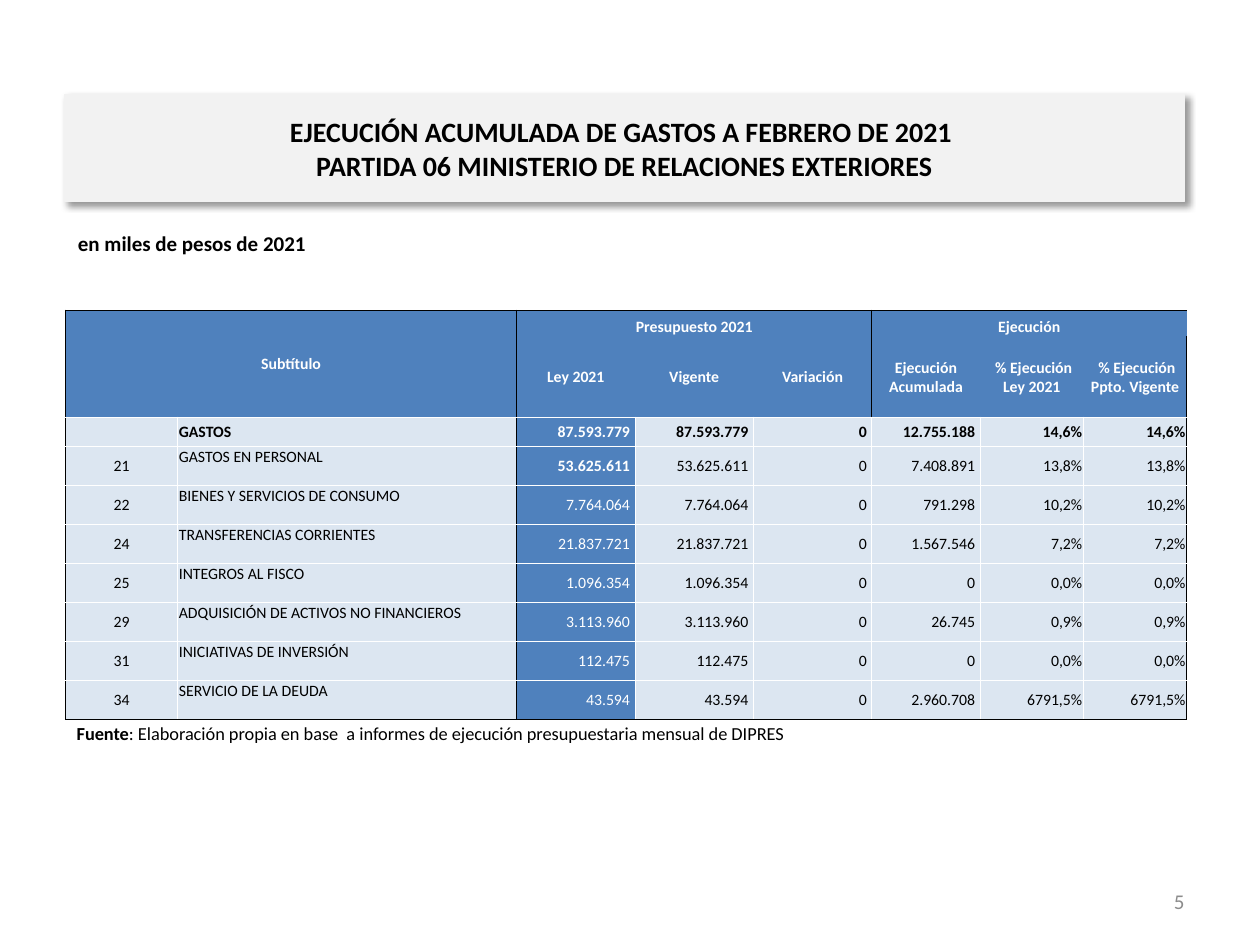
import dataclasses

import lxml.etree
import pptx
import pptx.dml.color
import pptx.enum.text
import pptx.oxml.ns
import pptx.util

Inches = pptx.util.Inches
Pt = pptx.util.Pt
ALIGN = pptx.enum.text.PP_ALIGN
ANCHOR = pptx.enum.text.MSO_ANCHOR
qn = pptx.oxml.ns.qn


@dataclasses.dataclass(frozen=True)
class Theme:
    """Colours and type of the slide."""
    font: str = "Calibri"
    black: str = "000000"
    white: str = "FFFFFF"
    banner: str = "F2F2F2"
    header: str = "4F81BD"
    body: str = "DCE6F1"
    muted: str = "8C8C8C"
    title_size: float = 16
    unit_size: float = 12
    source_size: float = 10.5
    table_size: float = 9
    rule: float = 0.5


THEME = Theme()

COLUMN_WIDTHS = [0.89, 2.69, 0.94, 0.94, 0.94, 0.86, 0.82, 0.82]
HEADER_ROWS = [
    ["Subtítulo", "", "Presupuesto 2021", "", "", "Ejecución", "", ""],
    ["", "", "Ley 2021", "Vigente", "Variación", "Ejecución Acumulada",
     " % Ejecución Ley 2021", " % Ejecución Ppto. Vigente"],
]
BUDGET = [
    ("", "GASTOS", "87.593.779", "12.755.188", "14,6%"),
    ("21", "GASTOS EN PERSONAL", "53.625.611", "7.408.891", "13,8%"),
    ("22", "BIENES Y SERVICIOS DE CONSUMO", "7.764.064", "791.298", "10,2%"),
    ("24", "TRANSFERENCIAS CORRIENTES", "21.837.721", "1.567.546", "7,2%"),
    ("25", "INTEGROS AL FISCO", "1.096.354", "0", "0,0%"),
    ("29", "ADQUISICIÓN DE ACTIVOS NO FINANCIEROS", "3.113.960", "26.745", "0,9%"),
    ("31", "INICIATIVAS DE INVERSIÓN", "112.475", "0", "0,0%"),
    ("34", "SERVICIO DE LA DEUDA", "43.594", "2.960.708", "6791,5%"),
]
ROW_HEIGHTS = [0.21, 0.64, 0.23] + [0.31] * (len(BUDGET) - 1)


def rgb(value):
    """Return a colour object for a hex value."""
    return pptx.dml.color.RGBColor.from_string(value)


def write(paragraph, text, size, color=THEME.black, bold=False, align=ALIGN.LEFT):
    """Append formatted text to a paragraph, breaking lines at newlines."""
    paragraph.alignment = align
    for index, line in enumerate(text.split("\n")):
        if index:
            paragraph.add_line_break()
        run = paragraph.add_run()
        run.text = line
        run.font.name = THEME.font
        run.font.size = Pt(size)
        run.font.bold = bold
        run.font.color.rgb = rgb(color)


def add_box(slide, box, anchor=ANCHOR.TOP):
    """Add a wrapping text box and return its first paragraph."""
    frame = slide.shapes.add_textbox(*map(Inches, box)).text_frame
    frame.word_wrap = True
    frame.vertical_anchor = anchor
    return frame.paragraphs[0]


def place_title(slide, box):
    """Format the title placeholder as a grey banner with a soft shadow."""
    title = slide.shapes.title
    title.left, title.top, title.width, title.height = map(Inches, box)
    title.fill.solid()
    title.fill.fore_color.rgb = rgb(THEME.banner)
    title.line.color.rgb = rgb(THEME.banner)
    title.line.width = Pt(0.75)
    effects = lxml.etree.SubElement(title.element.spPr, qn("a:effectLst"))
    shadow = lxml.etree.SubElement(
        effects, qn("a:outerShdw"), blurRad=str(Pt(4)), dist=str(Pt(3)),
        dir=str(45 * 60000), algn="tl", rotWithShape="0")
    color = lxml.etree.SubElement(shadow, qn("a:srgbClr"), val=THEME.black)
    lxml.etree.SubElement(color, qn("a:alpha"), val="40000")
    frame = title.text_frame
    frame.auto_size = pptx.enum.text.MSO_AUTO_SIZE.NONE
    frame.vertical_anchor = ANCHOR.MIDDLE
    write(frame.paragraphs[0],
          "EJECUCIÓN ACUMULADA DE GASTOS A FEBRERO DE 2021 \n"
          "PARTIDA 06 MINISTERIO DE RELACIONES EXTERIORES",
          THEME.title_size, bold=True, align=ALIGN.CENTER)


def vertical_rule(row, edge):
    """Return the colour of a vertical grid line, or None."""
    if row < len(HEADER_ROWS):
        return THEME.black if edge in (0, 2, 5, 8) else None
    return THEME.black if edge in (0, 2, 8) else THEME.white


def horizontal_rule(edge):
    """Return the colour of a horizontal grid line, or None."""
    if edge in (0, len(ROW_HEIGHTS)):
        return THEME.black
    return None if edge == 1 else THEME.white


def draw_borders(cell, row, column):
    """Draw the four borders of a cell."""
    rules = {"a:lnL": vertical_rule(row, column),
             "a:lnR": vertical_rule(row, column + 1),
             "a:lnT": horizontal_rule(row),
             "a:lnB": horizontal_rule(row + 1)}
    properties = cell._tc.get_or_add_tcPr()
    for index, (tag, color) in enumerate(rules.items()):
        line = lxml.etree.SubElement(properties, qn(tag), w=str(Pt(THEME.rule)))
        if color:
            fill = lxml.etree.SubElement(line, qn("a:solidFill"))
            lxml.etree.SubElement(fill, qn("a:srgbClr"), val=color)
        else:
            lxml.etree.SubElement(line, qn("a:noFill"))
        properties.insert(index, line)


def fill_cell(cell, text, row, column):
    """Fill one cell according to its row and column."""
    in_header = row < len(HEADER_ROWS)
    is_total = row == len(HEADER_ROWS)
    is_law = column == 2
    dark = in_header or is_law
    cell.fill.solid()
    cell.fill.fore_color.rgb = rgb(THEME.header if dark else THEME.body)
    cell.margin_left = cell.margin_top = cell.margin_right = Inches(0.01)
    cell.margin_bottom = 0
    cell.vertical_anchor = ANCHOR.MIDDLE
    align = ALIGN.CENTER
    if in_header and row == 0 and column > 1:
        cell.vertical_anchor = ANCHOR.BOTTOM
    elif not in_header and column == 1:
        align = ALIGN.JUSTIFY
        cell.vertical_anchor = ANCHOR.MIDDLE if is_total else ANCHOR.TOP
    elif not in_header and column > 1:
        align = ALIGN.RIGHT
        cell.margin_right = Inches(0.04 if column < 6 else 0.01)
    paragraph = cell.text_frame.paragraphs[0]
    if text:
        bold = in_header or is_total or (is_law and row == len(HEADER_ROWS) + 1)
        write(paragraph, text, THEME.table_size,
              THEME.white if dark else THEME.black, bold, align)
    else:
        lxml.etree.SubElement(paragraph._p, qn("a:endParaRPr"),
                              sz=str(THEME.table_size * 100))
    draw_borders(cell, row, column)


def place_table(slide, left, top):
    """Build the budget table from its upper left corner."""
    rows = HEADER_ROWS + [[code, name, law, law, "0", spent, share, share]
                          for code, name, law, spent, share in BUDGET]
    table = slide.shapes.add_table(
        len(rows), len(COLUMN_WIDTHS), Inches(left), Inches(top),
        Inches(sum(COLUMN_WIDTHS)), Inches(sum(ROW_HEIGHTS))).table
    table.first_row = table.horz_banding = False
    for column, width in zip(table.columns, COLUMN_WIDTHS):
        column.width = Inches(width)
    for table_row, height in zip(table.rows, ROW_HEIGHTS):
        table_row.height = Inches(height)
    for row, texts in enumerate(rows):
        for column, text in enumerate(texts):
            fill_cell(table.cell(row, column), text, row, column)
    for start, end in (((0, 0), (1, 1)), ((0, 2), (0, 4)), ((0, 5), (0, 7))):
        table.cell(*start).merge(table.cell(*end))


def place_notes(slide, unit_box, source_box, number_box):
    """Add the unit line, the source line and the page number."""
    write(add_box(slide, unit_box), "en miles de pesos de 2021",
          THEME.unit_size, bold=True)
    source = add_box(slide, source_box)
    write(source, "Fuente", THEME.source_size, bold=True)
    write(source, ": Elaboración propia en base  a informes de ejecución "
          "presupuestaria mensual de DIPRES", THEME.source_size)
    write(add_box(slide, number_box, ANCHOR.MIDDLE), "5", THEME.unit_size,
          THEME.muted, align=ALIGN.RIGHT)


def main():
    """Build and save the slide."""
    deck = pptx.Presentation()
    deck.slide_width, deck.slide_height = Inches(10), Inches(7.5)
    slide = deck.slides.add_slide(deck.slide_layouts[5])
    place_title(slide, (0.51, 0.75, 8.89, 0.85))
    place_notes(slide, (0.52, 1.78, 8.21, 0.4), (0.51, 5.68, 8.18, 0.31),
                (7.17, 6.95, 2.33, 0.4))
    place_table(slide, 0.52, 2.46)
    deck.save("out.pptx")


if __name__ == "__main__":
    main()
